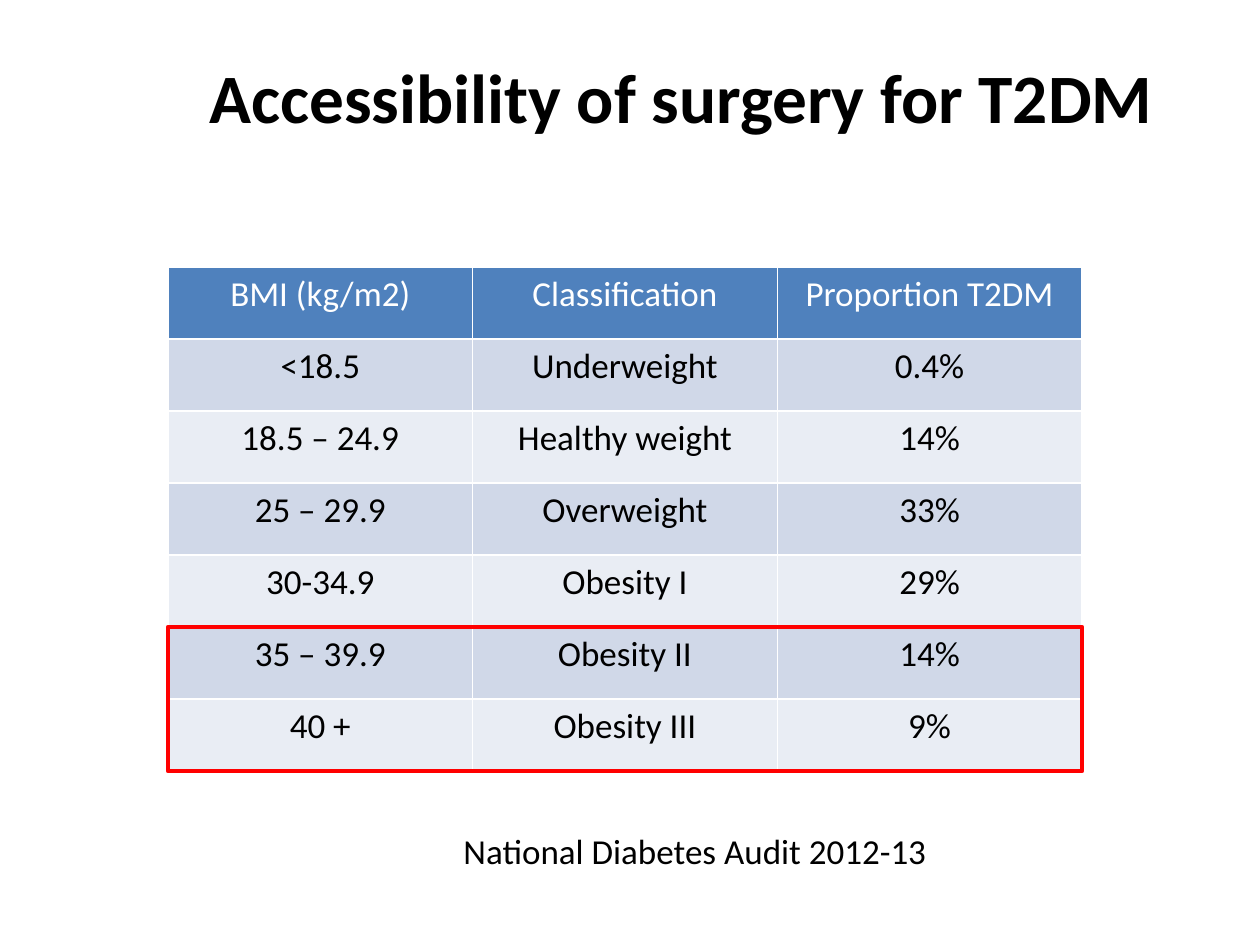
from lxml import etree
from pptx import Presentation
from pptx import util as u
from pptx.dml.color import RGBColor
from pptx.enum import shapes, text
from pptx.oxml.ns import qn

PX = u.Inches(1) / 126
FONT = "Calibri"
COLORS = {
    "text": "000000",
    "white": "FFFFFF",
    "header": "4F81BD",
    "band_dark": "D0D8E8",
    "band_light": "E9EDF4",
    "highlight": "FF0000",
}
ROWS = [
    ("BMI (kg/m2)", "Classification", "Proportion T2DM"),
    ("<18.5", "Underweight", "0.4%"),
    ("18.5 – 24.9", "Healthy weight", "14%"),
    ("25 – 29.9", "Overweight", "33%"),
    ("30-34.9", "Obesity I", "29%"),
    ("35 – 39.9", "Obesity II", "14%"),
    ("40 +", "Obesity III", "9%"),
]
LEFT, TOP, WIDTH, ROW_H = 168, 267, 914, 72


def px(*lengths):
    return [u.Emu(round(n * PX)) for n in lengths]


def rgb(name):
    return RGBColor.from_string(COLORS[name])


def write(tf, words, size, color="text", bold=False, align=text.PP_ALIGN.CENTER):
    p = tf.paragraphs[0]
    p.text = words
    p.alignment = align
    p.font.name = FONT
    p.font.size = u.Pt(size)
    p.font.bold = bold
    p.font.color.rgb = rgb(color)


def add_text(slide, box, words, size, anchor=text.MSO_ANCHOR.TOP, **style):
    tf = slide.shapes.add_textbox(*px(*box)).text_frame
    tf.word_wrap = True
    tf.vertical_anchor = anchor
    write(tf, words, size, **style)


def set_borders(cell, color, points):
    tc_pr = cell._tc.get_or_add_tcPr()
    for side in ("a:lnL", "a:lnR", "a:lnT", "a:lnB"):
        ln = etree.SubElement(tc_pr, qn(side), w=str(u.Pt(points)))
        fill = etree.SubElement(ln, qn("a:solidFill"))
        etree.SubElement(fill, qn("a:srgbClr"), val=COLORS[color])


def add_bmi_table(slide):
    box = px(LEFT, TOP, WIDTH, ROW_H * len(ROWS))
    table = slide.shapes.add_table(len(ROWS), len(ROWS[0]), *box).table
    for i, row in enumerate(ROWS):
        band = "band_dark" if i % 2 else "band_light"
        for j, words in enumerate(row):
            cell = table.cell(i, j)
            set_borders(cell, "white", 1)
            cell.fill.solid()
            cell.fill.fore_color.rgb = rgb(band if i else "header")
            write(cell.text_frame, words, 20, "text" if i else "white")


def add_outline(slide, box, color, points):
    sp = slide.shapes.add_shape(shapes.MSO_SHAPE.RECTANGLE, *px(*box))
    sp.shadow.inherit = False
    sp.fill.background()
    sp.line.color.rgb = rgb(color)
    sp.line.width = u.Pt(points)


def main():
    prs = Presentation()
    prs.slide_width, prs.slide_height = px(1260, 945)
    slide = prs.slides.add_slide(prs.slide_layouts[6])

    # Title
    add_text(slide, (166, 38, 1031, 115), "Accessibility of surgery for T2DM",
             39.6, text.MSO_ANCHOR.MIDDLE, bold=True)

    # Table and its source
    add_bmi_table(slide)
    add_text(slide, (451, 823, 648, 55), "National Diabetes Audit 2012-13",
             20, align=text.PP_ALIGN.LEFT)

    # Frame around the last two rows
    frame_top = TOP + ROW_H * (len(ROWS) - 2)
    add_outline(slide, (LEFT, frame_top, WIDTH, 2 * ROW_H), "highlight", 2.75)

    prs.save("out.pptx")


if __name__ == "__main__":
    main()
